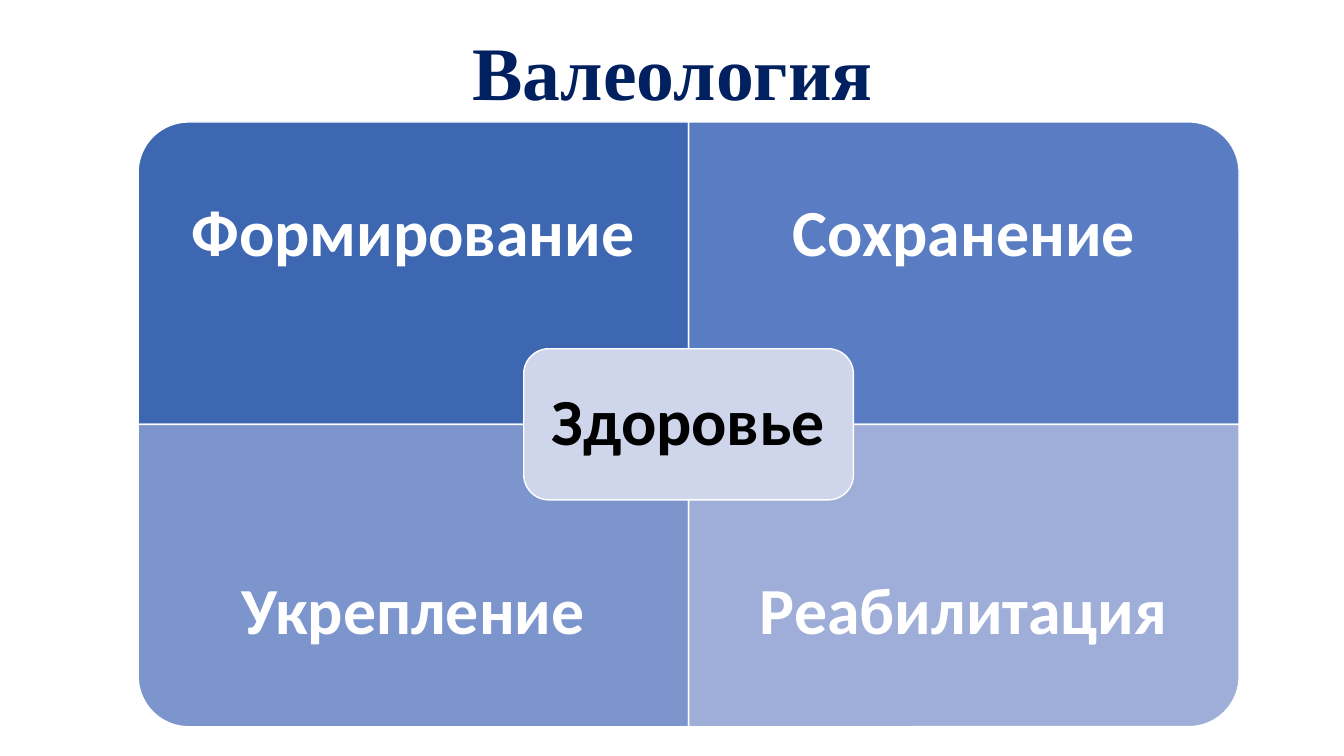
import pptx
import pptx.util
import pptx.dml.color
import pptx.enum.shapes
import pptx.enum.text

Inches = pptx.util.Inches
Pt = pptx.util.Pt
SHAPES = pptx.enum.shapes.MSO_SHAPE
ANCHOR = pptx.enum.text.MSO_ANCHOR

MATRIX_LEFT, MATRIX_TOP = 1.37, 1.21
QUADRANT_W, QUADRANT_H = 5.46, 3
LABEL_H = 2.25
CORE_W, CORE_H = 3.27, 1.5

# Word, fill, column, row, rotation that turns the round corner outwards
QUADRANTS = [
    ("Формирование", "3E67B2", 0, 0, 270),
    ("Сохранение", "5A7CC3", 1, 0, 0),
    ("Укрепление", "7D95CD", 0, 1, 180),
    ("Реабилитация", "9FAED8", 1, 1, 90),
]


def color(value):
    return pptx.dml.color.RGBColor.from_string(value)


def add_panel(slide, preset, center_x, center_y, width, height, fill, rotation=0):
    """Add a white-edged panel whose drawn size is width by height."""
    if rotation % 180:
        width, height = height, width
    panel = slide.shapes.add_shape(
        preset, Inches(center_x - width / 2), Inches(center_y - height / 2),
        Inches(width), Inches(height))
    panel.rotation = rotation
    panel.shadow.inherit = False
    panel.fill.solid()
    panel.fill.fore_color.rgb = color(fill)
    panel.line.color.rgb = color("FFFFFF")
    panel.line.width = Pt(1)


def add_label(slide, text, left, top, width, height, ink, size=47, font="Calibri",
              anchor=ANCHOR.MIDDLE, inset_x=0.37, inset_y=0.37):
    box = slide.shapes.add_textbox(
        Inches(left), Inches(top), Inches(width), Inches(height))
    frame = box.text_frame
    frame.word_wrap = True
    frame.vertical_anchor = anchor
    frame.margin_left = frame.margin_right = Inches(inset_x)
    frame.margin_top = frame.margin_bottom = Inches(inset_y)
    paragraph = frame.paragraphs[0]
    paragraph.alignment = pptx.enum.text.PP_ALIGN.CENTER
    paragraph.line_spacing = 0.9
    run = paragraph.add_run()
    run.text = text
    run.font.name = font
    run.font.size = Pt(size)
    run.font.bold = True
    run.font.color.rgb = color(ink)


def add_quadrant(slide, text, fill, column, row, rotation):
    left = MATRIX_LEFT + column * QUADRANT_W
    top = MATRIX_TOP + row * QUADRANT_H
    add_panel(slide, SHAPES.ROUND_1_RECTANGLE, left + QUADRANT_W / 2,
              top + QUADRANT_H / 2, QUADRANT_W, QUADRANT_H, fill, rotation)
    # Labels keep to the outer edge, clear of the core
    label_top = top + row * (QUADRANT_H - LABEL_H)
    add_label(slide, text, left, label_top, QUADRANT_W, LABEL_H, "FFFFFF")


def add_core(slide, text):
    center_x, center_y = MATRIX_LEFT + QUADRANT_W, MATRIX_TOP + QUADRANT_H
    add_panel(slide, SHAPES.ROUNDED_RECTANGLE, center_x, center_y,
              CORE_W, CORE_H, "CFD5EA")
    label_w, label_h = CORE_W - 0.14, CORE_H - 0.14
    add_label(slide, text, center_x - label_w / 2, center_y - label_h / 2,
              label_w, label_h, "000000", inset_x=0.2, inset_y=0.2)


def main():
    deck = pptx.Presentation()
    deck.slide_width, deck.slide_height = Inches(13.33), Inches(7.5)
    slide = deck.slides.add_slide(deck.slide_layouts[6])

    # Title
    add_label(slide, "Валеология", 1.67, 0.34, 10, 0.87, "002060", size=54,
              font="Times New Roman", anchor=ANCHOR.BOTTOM,
              inset_x=0.1, inset_y=0.05)

    # Matrix of four quadrants around the core
    for quadrant in QUADRANTS:
        add_quadrant(slide, *quadrant)
    add_core(slide, "Здоровье")

    deck.save("out.pptx")


if __name__ == "__main__":
    main()
